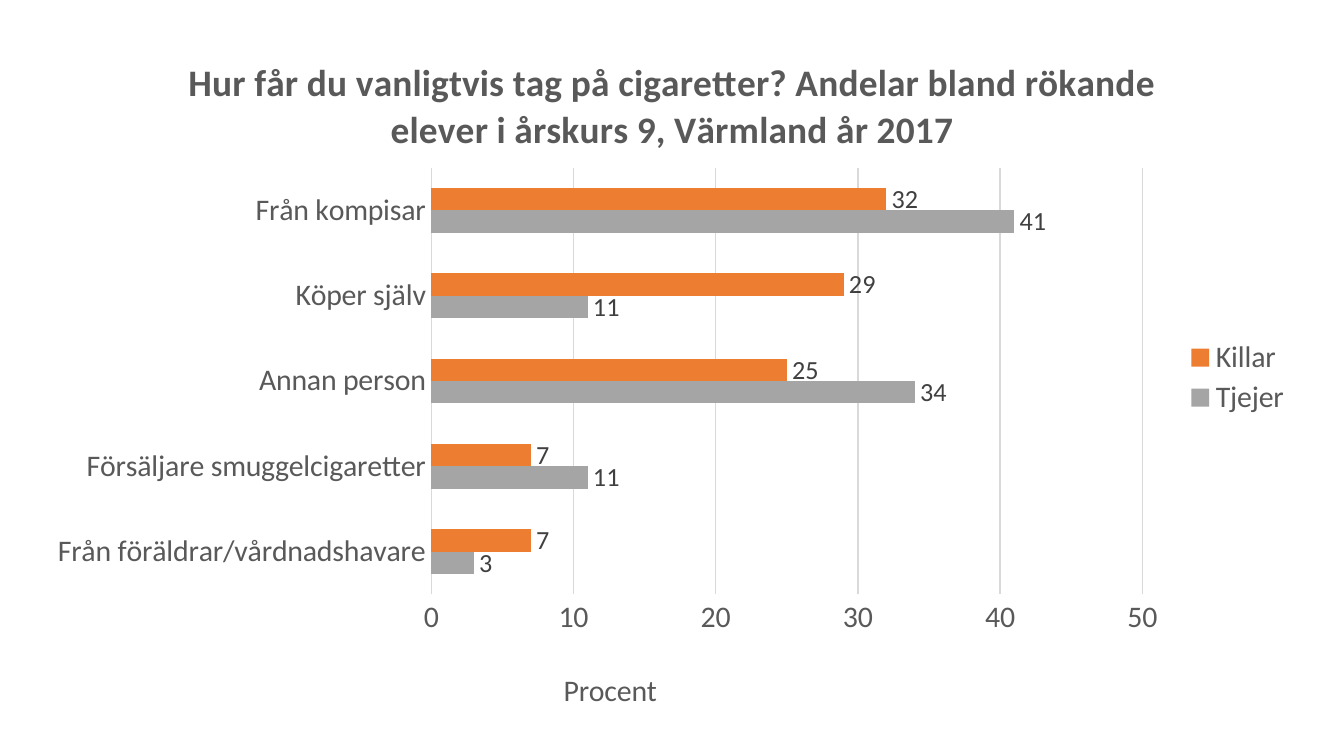
"""Build a slide with a bar chart of how smoking pupils in Värmland get cigarettes."""
from lxml.etree import SubElement
from pptx import Presentation
from pptx.chart.data import CategoryChartData
from pptx.dml.color import RGBColor
from pptx.enum.chart import XL_CHART_TYPE as ChartType
from pptx.enum.chart import XL_LABEL_POSITION as LabelPosition
from pptx.enum.chart import XL_LEGEND_POSITION as LegendPosition
from pptx.enum.chart import XL_TICK_MARK as TickMark
from pptx.oxml.ns import qn
from pptx.util import Cm, Pt

COLORS = {"Tjejer": "A5A5A5", "Killar": "ED7D31", "text": "595959",
          "values": "404040", "grid": "D9D9D9"}
ANSWERS = {
    "Från föräldrar/vårdnadshavare": (3, 7),
    "Försäljare smuggelcigaretter": (11, 7),
    "Annan person": (34, 25),
    "Köper själv": (11, 29),
    "Från kompisar": (41, 32),
}


def style_font(font, size, color="text", bold=False):
    font.name = "Calibri"
    font.size = Pt(size)
    font.bold = bold
    font.color.rgb = RGBColor.from_string(COLORS[color])


def place(element, index, **settings):
    layout = element.find(qn("c:layout"))
    if layout is None:
        layout = SubElement(element, qn("c:layout"))
        element.insert(index, layout)
    manual = SubElement(layout, qn("c:manualLayout"))
    for tag, value in settings.items():
        SubElement(manual, qn(f"c:{tag}")).set("val", str(value))


prs = Presentation()
prs.slide_width, prs.slide_height = Cm(25.4), Cm(14.28)
slide = prs.slides.add_slide(prs.slide_layouts[6])

survey = CategoryChartData(number_format="0")
survey.categories = list(ANSWERS)
for group, shares in zip(("Tjejer", "Killar"), zip(*ANSWERS.values())):
    survey.add_series(group, shares)
chart = slide.shapes.add_chart(ChartType.BAR_CLUSTERED, Cm(0.71), Cm(0.53),
                               Cm(24), Cm(13.21), survey).chart
style_font(chart.font, 16)

chart.has_title = True
heading = chart.chart_title.text_frame
heading.text = ("Hur får du vanligtvis tag på cigaretter? Andelar bland rökande "
                "elever i årskurs 9, Värmland år 2017")
style_font(heading.paragraphs[0].font, 20, bold=True)

answer_axis = chart.category_axis
answer_axis.major_tick_mark = TickMark.NONE
answer_axis.format.line.color.rgb = RGBColor.from_string(COLORS["grid"])
answer_axis.format.line.width = Pt(0.75)

percent_axis = chart.value_axis
percent_axis.major_tick_mark = TickMark.NONE
percent_axis.minimum_scale = 0
percent_axis.maximum_scale = 50
percent_axis.major_unit = 10
percent_axis.tick_labels.number_format = "0"
percent_axis.tick_labels.number_format_is_linked = False
percent_axis.format.line.fill.background()
gridline = percent_axis.major_gridlines.format.line
gridline.color.rgb = RGBColor.from_string(COLORS["grid"])
gridline.width = Pt(0.75)
percent_title = percent_axis.axis_title
percent_title.text_frame.text = "Procent"
style_font(percent_title.text_frame.paragraphs[0].font, 16)
for axis in (answer_axis, percent_axis):
    style_font(axis.tick_labels.font, 16)

chart.has_legend = True
legend = chart.legend
legend.position = LegendPosition.RIGHT
legend.include_in_layout = False
style_font(legend.font, 16)

bars = chart.plots[0]
bars.gap_width = 182
bars.overlap = 0
bars.vary_by_categories = False
for group in bars.series:
    group.format.fill.solid()
    group.format.fill.fore_color.rgb = RGBColor.from_string(COLORS[group.name])
    shares = group.data_labels
    shares.show_value = True
    shares.position = LabelPosition.OUTSIDE_END
    shares.number_format = "0"
    shares.number_format_is_linked = False
    style_font(shares.font, 14, "values")

plot_area = chart.element.find(f".//{qn('c:plotArea')}")
place(plot_area, 0, layoutTarget="inner", xMode="edge", yMode="edge",
      x=0.31, y=0.2, w=0.56, h=0.61)
place(percent_title.element if hasattr(percent_title, "element")
      else plot_area.find(f".//{qn('c:title')}"), 1,
      xMode="edge", yMode="edge", x=0.41, y=0.91)
place(chart.element.find(f".//{qn('c:legend')}"), 1, xMode="edge", yMode="edge",
      x=0.9, y=0.44, w=0.09, h=0.12)

prs.save("out.pptx")
